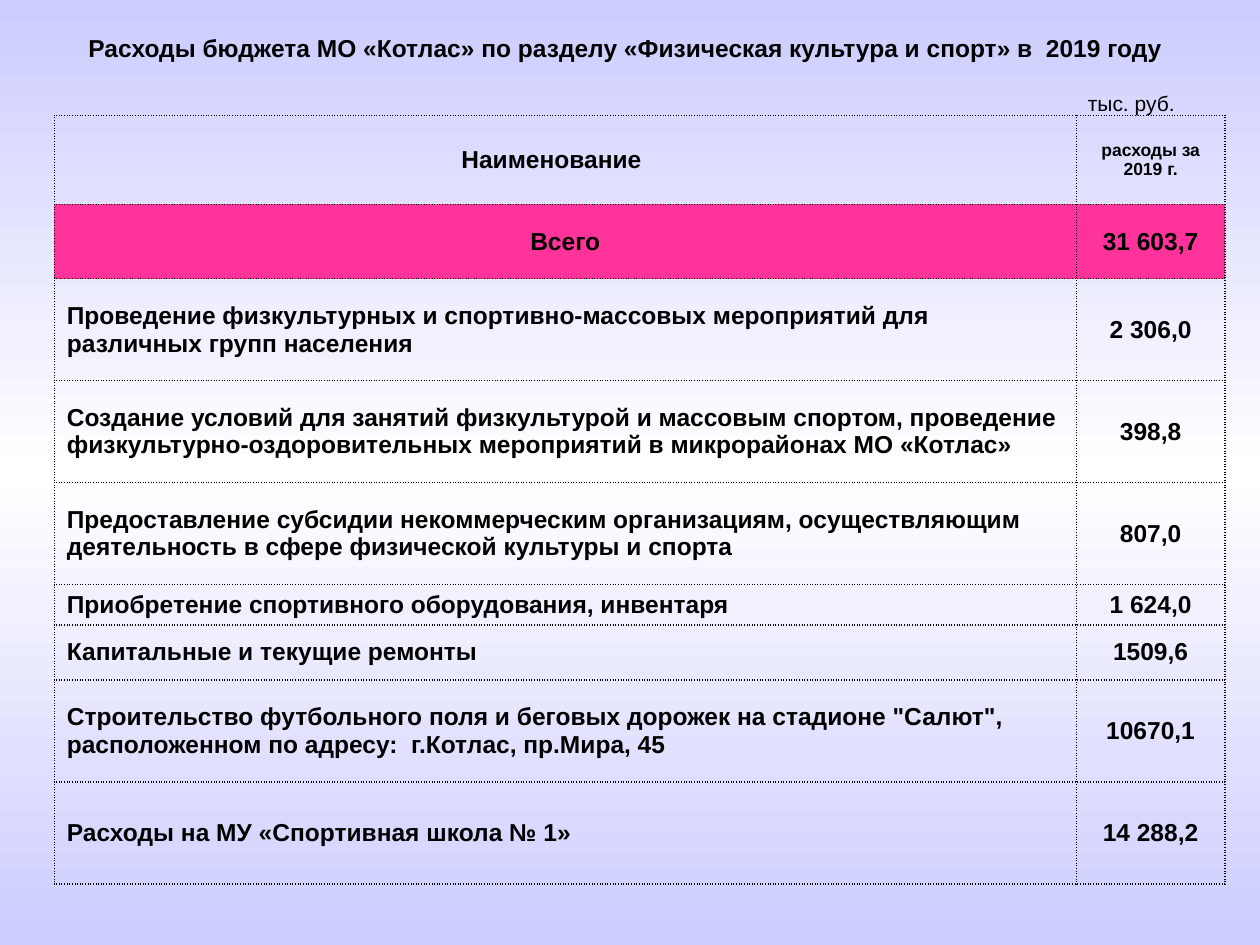
from copy import deepcopy
from dataclasses import dataclass

from lxml.etree import SubElement
from pptx import Presentation
from pptx.dml.color import RGBColor
from pptx.enum.text import MSO_ANCHOR as Anchor, PP_ALIGN as Align
from pptx.oxml.ns import qn
from pptx.slide import Slide
from pptx.table import _Cell as Cell
from pptx.text.text import TextFrame
from pptx.util import Pt

COLORS = {"text": "000000", "border": "000000", "total": "FF3399", "edge": "CCCCFF", "middle": "FFFFFF"}
FONT = "Arial"
TABLE_LEFT, TABLE_TOP = 31, 66
COLUMN_WIDTHS = (584, 85)
HEADING_RIGHT_MARGIN = 23


@dataclass(frozen=True)
class Label:
    text: str
    left: float
    top: float
    width: float
    height: float
    size: float
    bold: bool


@dataclass(frozen=True)
class Row:
    name: str
    amount: str
    height: float = 58.3
    name_align: Align = Align.LEFT
    amount_size: float = 14
    fill: str | None = None


LABELS = [
    Label("Расходы бюджета МО «Котлас» по разделу «Физическая культура и спорт» в  2019 году",
          31, 0, 653, 55, 14, True),
    Label("тыс. руб.", 612, 45, 69, 28, 12, False),
]

ROWS = [
    Row("Наименование", "расходы за 2019 г.", 50.8, Align.CENTER, 10),
    Row("Всего", "31 603,7", 42.5, Align.CENTER, fill="total"),
    Row("Проведение физкультурных и спортивно-массовых мероприятий для различных групп населения",
        "2 306,0"),
    Row("Создание условий для занятий физкультурой и массовым спортом, проведение "
        "физкультурно-оздоровительных мероприятий в микрорайонах МО «Котлас»", "398,8"),
    Row("Предоставление субсидии некоммерческим организациям, осуществляющим деятельность "
        "в сфере физической культуры и спорта", "807,0"),
    Row("Приобретение спортивного оборудования, инвентаря", "1 624,0", 21.6),
    Row("Капитальные и текущие ремонты", "1509,6", 31.5),
    Row('Строительство футбольного поля и беговых дорожек на стадионе "Салют", '
        "расположенном по адресу:  г.Котлас, пр.Мира, 45", "10670,1"),
    Row("Расходы на МУ «Спортивная школа № 1»", "14 288,2"),
]


def color(name: str) -> RGBColor:
    return RGBColor.from_string(COLORS[name])


def write_text(text_frame: TextFrame, text: str, size: float, bold: bool, align: Align) -> None:
    text_frame.text = text
    paragraph = text_frame.paragraphs[0]
    paragraph.alignment = align
    for run in paragraph.runs:
        run.font.name = FONT
        run.font.size = Pt(size)
        run.font.bold = bold
        run.font.color.rgb = color("text")


def paint_background(slide: Slide) -> None:
    fill = slide.background.fill
    fill.gradient()
    fill.gradient_angle = 270
    for stop in fill.gradient_stops:
        stop.color.rgb = color("edge")
    first_stop = slide.element.find(".//" + qn("a:gs"))
    first_stop.addnext(deepcopy(first_stop))
    middle_stop = fill.gradient_stops[1]
    middle_stop.position = 0.5
    middle_stop.color.rgb = color("middle")


def add_label(slide: Slide, label: Label) -> None:
    shape = slide.shapes.add_textbox(Pt(label.left), Pt(label.top), Pt(label.width), Pt(label.height))
    shape.text_frame.word_wrap = True
    shape.text_frame.vertical_anchor = Anchor.MIDDLE
    write_text(shape.text_frame, label.text, label.size, label.bold, Align.CENTER)


def add_borders(cell: Cell) -> None:
    properties = cell._tc.get_or_add_tcPr()
    for index, side in enumerate(("lnL", "lnR", "lnT", "lnB")):
        line = SubElement(properties, qn(f"a:{side}"), w=str(Pt(1)))
        solid = SubElement(line, qn("a:solidFill"))
        SubElement(solid, qn("a:srgbClr"), val=COLORS["border"])
        SubElement(line, qn("a:prstDash"), val="sysDot")
        properties.insert(index, line)


def format_cell(cell: Cell, text: str, size: float, align: Align, fill: str | None) -> None:
    cell.vertical_anchor = Anchor.MIDDLE
    write_text(cell.text_frame, text, size, True, align)
    if fill:
        cell.fill.solid()
        cell.fill.fore_color.rgb = color(fill)
    else:
        cell.fill.background()
    add_borders(cell)


def add_expense_table(slide: Slide, rows: list[Row]) -> None:
    table = slide.shapes.add_table(
        len(rows), len(COLUMN_WIDTHS), Pt(TABLE_LEFT), Pt(TABLE_TOP),
        Pt(sum(COLUMN_WIDTHS)), Pt(sum(row.height for row in rows))).table
    table.first_row = False
    table.horz_banding = False
    for column, width in zip(table.columns, COLUMN_WIDTHS):
        column.width = Pt(width)
    for index, row in enumerate(rows):
        table.rows[index].height = Pt(row.height)
        format_cell(table.cell(index, 0), row.name, 14, row.name_align, row.fill)
        format_cell(table.cell(index, 1), row.amount, row.amount_size, Align.CENTER, row.fill)
    table.cell(0, 0).margin_right = Pt(HEADING_RIGHT_MARGIN)


def main() -> None:
    presentation = Presentation()
    presentation.slide_width, presentation.slide_height = Pt(720), Pt(540)
    slide = presentation.slides.add_slide(presentation.slide_layouts[6])
    paint_background(slide)
    add_expense_table(slide, ROWS)
    for label in LABELS:
        add_label(slide, label)
    presentation.save("out.pptx")


if __name__ == "__main__":
    main()
